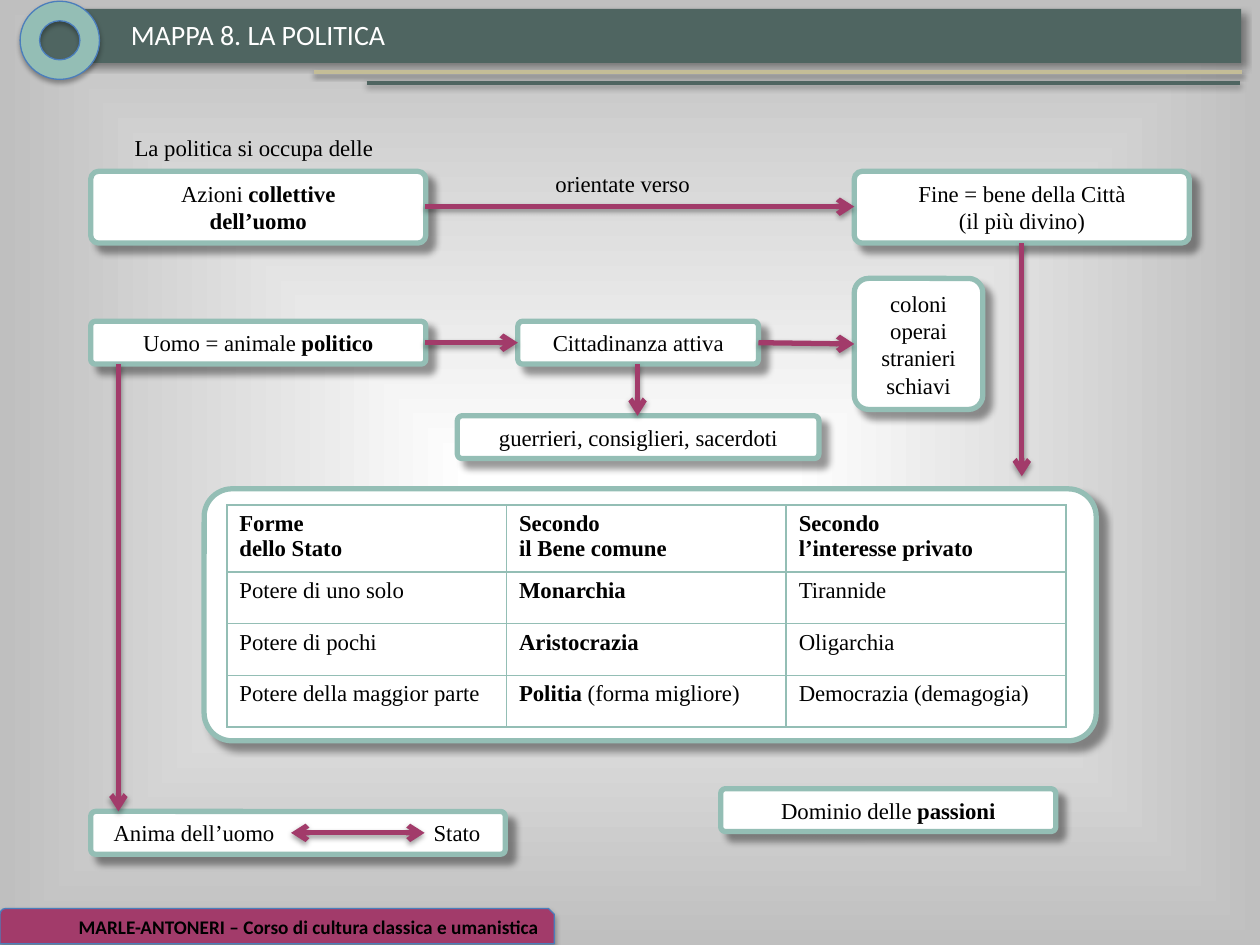
from dataclasses import dataclass
from typing import NamedTuple

from lxml import etree
from pptx import Presentation
from pptx.dml.color import RGBColor
from pptx.enum.shapes import MSO_CONNECTOR, MSO_SHAPE
from pptx.enum.text import MSO_ANCHOR, MSO_AUTO_SIZE, PP_ALIGN
from pptx.oxml.ns import qn
from pptx.util import Inches, Pt

ROUNDED = MSO_SHAPE.ROUNDED_RECTANGLE
RECTANGLE = MSO_SHAPE.RECTANGLE
SNIPPED = MSO_SHAPE.SNIP_ROUND_RECTANGLE
DONUT = MSO_SHAPE.DONUT
STRAIGHT = MSO_CONNECTOR.STRAIGHT
MIDDLE = MSO_ANCHOR.MIDDLE
GROW = MSO_AUTO_SIZE.SHAPE_TO_FIT_TEXT
LEFT, CENTER, RIGHT = PP_ALIGN.LEFT, PP_ALIGN.CENTER, PP_ALIGN.RIGHT


class Shadow(NamedTuple):
    opacity: int
    blur: float
    distance: float
    angle: int


@dataclass(frozen=True)
class Theme:
    header: str = "4F6561"
    sage: str = "94BEB5"
    berry: str = "A23B6A"
    sand: str = "C4BD97"
    outline: str = "4B7EBC"
    white: str = "FFFFFF"
    black: str = "000000"
    edge: str = "BFBFBF"
    serif: str = "Times New Roman"
    sans: str = "Calibri"
    title_size: float = 16
    body_size: float = 13
    footer_size: float = 11
    thick: float = 3
    rule: float = 2
    thin: float = 0.75
    corner: float = 0.111
    box_shadow: Shadow = Shadow(40, 4, 6, 45)
    bar_shadow: Shadow = Shadow(40, 4, 3, 45)
    badge_shadow: Shadow = Shadow(35, 3.1, 1.8, 90)
    line_shadow: Shadow = Shadow(38, 3.1, 1.6, 90)


THEME = Theme()


class Box(NamedTuple):
    left: float
    top: float
    width: float
    height: float
    text: str = ""


class Arrow(NamedTuple):
    x1: float
    y1: float
    x2: float
    y2: float
    both_ends: bool = False


BOXES = [
    Box(1.62, 3.88, 7.08, 2),
    Box(0.72, 1.36, 2.66, 0.57, "Azioni *collettive\vdell’uomo*"),
    Box(6.78, 1.36, 2.66, 0.57, "Fine = bene della Città\v(il più divino)"),
    Box(0.72, 2.55, 2.66, 0.34, "Uomo = animale *politico*"),
    Box(4.11, 2.55, 1.91, 0.34, "Cittadinanza attiva"),
    Box(5.72, 6.26, 2.66, 0.34, "Dominio delle *passioni*"),
    Box(3.63, 3.3, 2.87, 0.34, "guerrieri, consiglieri, sacerdoti"),
    Box(6.78, 2.21, 1.02, 1.04, "coloni\noperai\nstranieri\nschiavi"),
]
SOUL_AND_STATE = Box(0.72, 6.44, 3.29, 0.34, "Anima dell’uomo\tStato")
LABELS = [
    Box(0.97, 1.01, 2.12, 0.32, "La politica si occupa delle"),
    Box(4.31, 1.3, 1.28, 0.32, "orientate verso"),
]
ARROWS = [
    Arrow(3.37, 1.64, 6.78, 1.64),
    Arrow(3.37, 2.72, 4.11, 2.72),
    Arrow(6.02, 2.72, 6.78, 2.73),
    Arrow(5.06, 2.89, 5.06, 3.3),
    Arrow(8.11, 1.93, 8.11, 3.78),
    Arrow(2.31, 6.61, 3.37, 6.61, True),
    Arrow(0.94, 2.89, 0.94, 6.44),
]
STATE_FORMS = [
    ["*Forme\vdello Stato*", "*Secondo\vil Bene comune*", "*Secondo\vl’interesse privato*"],
    ["Potere di uno solo", "*Monarchia*", "Tirannide"],
    ["Potere di pochi", "*Aristocrazia*", "Oligarchia"],
    ["Potere della maggior parte", "*Politia* (forma migliore)", "Democrazia (demagogia)"],
]


def rgb(color: str) -> RGBColor:
    return RGBColor.from_string(color)


def add_xml(parent, tag: str, **attributes):
    return etree.SubElement(parent, qn(tag), {k: str(v) for k, v in attributes.items()})


def write(frame, text: str, *, size=THEME.body_size, font=THEME.serif, color=THEME.black,
          align=LEFT, bold=False) -> None:
    for index, content in enumerate(text.split("\n")):
        paragraph = frame.add_paragraph() if index else frame.paragraphs[0]
        paragraph.alignment = align
        for part, segment in enumerate(content.split("*")):
            for row, words in enumerate(segment.split("\v")):
                if row:
                    paragraph.add_line_break()
                if not words:
                    continue
                run = paragraph.add_run()
                run.text = words
                run.font.size = Pt(size)
                run.font.name = font
                run.font.bold = bold or part % 2 == 1
                run.font.color.rgb = rgb(color)


def cast_shadow(effects, shadow: Shadow) -> None:
    outer = add_xml(effects, "a:outerShdw", blurRad=Pt(shadow.blur), dist=Pt(shadow.distance),
                    dir=shadow.angle * 60000, rotWithShape=0)
    tone = add_xml(outer, "a:srgbClr", val=THEME.black)
    add_xml(tone, "a:alpha", val=shadow.opacity * 1000)


def draw_shape(slide, kind, box: Box, fill: str, shadow: Shadow, line=None, weight=THEME.thin):
    shape = slide.shapes.add_shape(kind, *map(Inches, box[:4]))
    shape.fill.solid()
    shape.fill.fore_color.rgb = rgb(fill)
    if line:
        shape.line.color.rgb = rgb(line)
        shape.line.width = Pt(weight)
    else:
        shape.line.fill.background()
    shape.shadow.inherit = False
    cast_shadow(shape.element.spPr.find(qn("a:effectLst")), shadow)
    shape.text_frame.word_wrap = True
    shape.text_frame.vertical_anchor = MIDDLE
    return shape


def draw_box(slide, box: Box, align=CENTER):
    shape = draw_shape(slide, ROUNDED, box, THEME.white, THEME.box_shadow, THEME.sage, THEME.thick)
    shape.adjustments[0] = THEME.corner
    if box.text:
        write(shape.text_frame, box.text, align=align)
    return shape


def draw_label(slide, box: Box, **style) -> None:
    frame = slide.shapes.add_textbox(*map(Inches, box[:4])).text_frame
    frame.word_wrap = False
    frame.auto_size = GROW
    write(frame, box.text, **style)


def draw_line(slide, route: Arrow, color: str, weight: float, arrow=True) -> None:
    connector = slide.shapes.add_connector(STRAIGHT, *map(Inches, route[:4]))
    connector.line.color.rgb = rgb(color)
    connector.line.width = Pt(weight)
    properties = connector.element.spPr
    stroke = properties.find(qn("a:ln"))
    if route.both_ends:
        add_xml(stroke, "a:headEnd", type="arrow")
    if arrow:
        add_xml(stroke, "a:tailEnd", type="arrow")
    cast_shadow(add_xml(properties, "a:effectLst"), THEME.line_shadow)


def draw_state_forms(slide) -> None:
    area = map(Inches, (1.8, 4.01, 6.66, 1.76))
    table = slide.shapes.add_table(len(STATE_FORMS), len(STATE_FORMS[0]), *area).table
    for index, row in enumerate(table.rows):
        row.height = Inches(0.41 if index else 0.53)
        for cell, text in zip(row.cells, STATE_FORMS[index]):
            write(cell.text_frame, text)
            properties = cell._tc.get_or_add_tcPr()
            for side in ("a:lnL", "a:lnR", "a:lnT", "a:lnB"):
                border = add_xml(properties, side, w=Pt(1))
                add_xml(add_xml(border, "a:solidFill"), "a:srgbClr", val=THEME.sage)
            cell.fill.solid()
            cell.fill.fore_color.rgb = rgb(THEME.white)
    for column in table.columns:
        column.width = Inches(2.22)


def paint_background(slide) -> None:
    fill = slide.background.fill
    fill.gradient()
    for stop, position, color in zip(fill.gradient_stops, (0, 1), (THEME.white, THEME.edge)):
        stop.position = position
        stop.color.rgb = rgb(color)
    gradient = next(slide.element.iter(qn("a:gradFill")))
    gradient.remove(gradient.find(qn("a:lin")))
    radial = add_xml(gradient, "a:path", path="shape")
    add_xml(radial, "a:fillToRect", l=50000, t=50000, r=50000, b=50000)


def draw_frame(slide) -> None:
    draw_shape(slide, RECTANGLE, Box(0.29, 0.07, 9.56, 0.43), THEME.header, THEME.bar_shadow)
    footer = draw_shape(slide, SNIPPED, Box(0, 7.21, 4.4, 0.28), THEME.berry,
                        THEME.badge_shadow, THEME.outline)
    write(footer.text_frame, "MARLE-ANTONERI – Corso di cultura classica e umanistica",
          size=THEME.footer_size, font=THEME.sans, bold=True, align=RIGHT)
    draw_line(slide, Arrow(2.49, 0.57, 9.86, 0.57), THEME.sand, THEME.rule, arrow=False)
    draw_line(slide, Arrow(2.91, 0.66, 9.84, 0.66), THEME.header, THEME.rule, arrow=False)


def main() -> None:
    deck = Presentation()
    deck.slide_width, deck.slide_height = Inches(10), Inches(7.5)
    slide = deck.slides.add_slide(deck.slide_layouts[6])
    paint_background(slide)
    draw_frame(slide)
    for box in BOXES:
        draw_box(slide, box)
    soul = draw_box(slide, SOUL_AND_STATE, align=LEFT).text_frame
    soul.margin_left = Inches(0.17)
    tabs = add_xml(soul.paragraphs[0]._p.get_or_add_pPr(), "a:tabLst")
    add_xml(tabs, "a:tab", pos=Inches(2.54), algn="l")
    draw_state_forms(slide)
    draw_label(slide, Box(0.94, 0.09, 2.26, 0.37, "MAPPA 8. LA POLITICA"),
               size=THEME.title_size, font=THEME.sans, color=THEME.white)
    draw_shape(slide, DONUT, Box(0.16, 0.01, 0.63, 0.62), THEME.sage,
               THEME.badge_shadow, THEME.outline)
    for label in LABELS:
        draw_label(slide, label)
    for arrow in ARROWS:
        draw_line(slide, arrow, THEME.berry, THEME.thick)
    deck.save("out.pptx")


if __name__ == "__main__":
    main()
